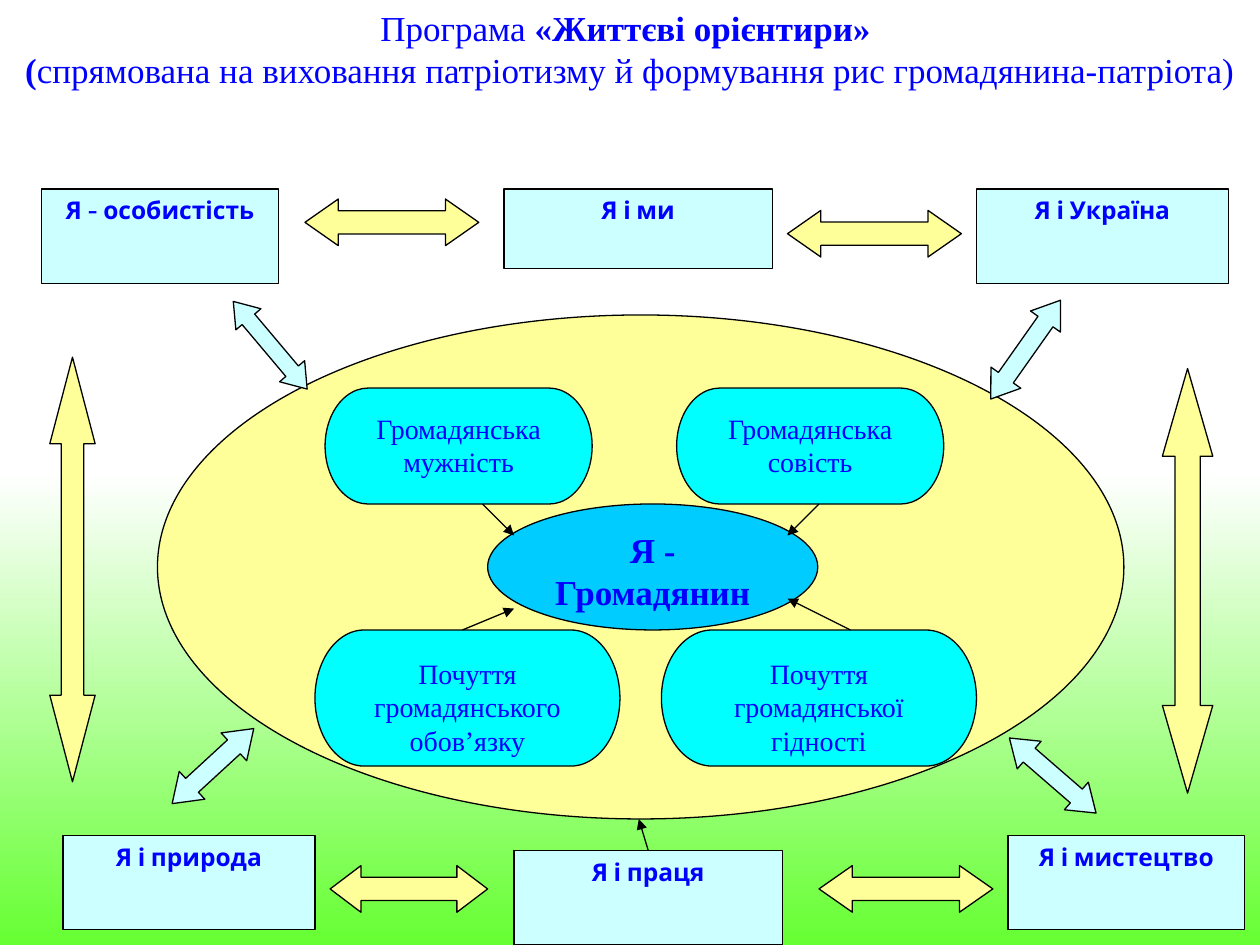
from dataclasses import dataclass

from lxml import etree
from pptx import Presentation
from pptx.dml.color import RGBColor
from pptx.enum import shapes, text
from pptx.oxml import ns
from pptx.util import Inches, Pt


@dataclass(frozen=True)
class Theme:
    ink: str = "0000FF"
    outline: str = "000000"
    meadow: str = "66FF33"
    white: str = "FFFFFF"
    yellow: str = "FFFF99"
    pale: str = "CCFFFF"
    cyan: str = "00FFFF"
    blue: str = "00CCFF"
    serif: str = "Times New Roman"
    sans: str = "Cabin"
    heading: int = 20
    virtue: int = 16
    label: int = 14
    stroke: float = 0.75


@dataclass(frozen=True)
class Box:
    left: float
    top: float
    width: float
    height: float
    words: str = ""


@dataclass(frozen=True)
class DoubleArrow:
    box: Box
    fill: str
    rotation: float = 0
    head: float = 0.715


@dataclass(frozen=True)
class Pointer:
    start: tuple[float, float]
    end: tuple[float, float]


THEME = Theme()

VIRTUES = [
    Box(2.58, 3.08, 2.12, 0.92, "Громадянська\nмужність"),
    Box(5.37, 3.08, 2.12, 0.92, "Громадянська совість"),
    Box(2.5, 5, 2.42, 1.08, "Почуття громадянського обов’язку"),
    Box(5.25, 5, 2.5, 1.08, "Почуття громадянської гідності"),
]
AREAS = [
    Box(0.33, 1.5, 1.88, 0.75, "Я - особистість"),
    Box(4, 1.5, 2.13, 0.63, "Я і ми"),
    Box(7.75, 1.5, 2, 0.75, "Я і Україна"),
    Box(0.5, 6.63, 2, 0.75, "Я і природа"),
    Box(8, 6.63, 1.88, 0.75, "Я і мистецтво"),
]
WORK = Box(4.08, 6.75, 2.13, 0.75, "Я і праця")
ARROWS = [
    DoubleArrow(Box(2.42, 1.58, 1.38, 0.37), THEME.yellow),
    DoubleArrow(Box(6.25, 1.67, 1.38, 0.37), THEME.yellow),
    DoubleArrow(Box(2.62, 6.87, 1.25, 0.37), THEME.yellow, 180, 0.66),
    DoubleArrow(Box(6.5, 6.87, 1.38, 0.37), THEME.yellow),
    DoubleArrow(Box(-1.11, 4.34, 3.37, 0.36), THEME.yellow, 90, 1.91),
    DoubleArrow(Box(7.74, 4.41, 3.37, 0.4), THEME.yellow, 90, 1.74),
    DoubleArrow(Box(1.69, 2.61, 0.91, 0.26), THEME.pale, 229.9),
    DoubleArrow(Box(7.66, 2.63, 0.96, 0.29), THEME.pale, 125.2),
    DoubleArrow(Box(1.25, 5.93, 0.88, 0.3), THEME.pale, 137.4),
    DoubleArrow(Box(7.9, 6.01, 0.91, 0.29), THEME.pale, 220.9),
]
POINTERS = [
    Pointer((3.83, 4), (4.08, 4.25)),
    Pointer((6.5, 4), (6.25, 4.25)),
    Pointer((3.67, 5), (4.08, 4.83)),
    Pointer((6.75, 5), (6.25, 4.75)),
]


def style_run(run, size: float, font: str, bold: bool) -> None:
    run.font.size = Pt(size)
    run.font.name = font
    run.font.bold = bold
    run.font.color.rgb = RGBColor.from_string(THEME.ink)


def draw_shape(slide, kind, box: Box, fill: str, size: float = THEME.label,
               font: str = THEME.serif, bold: bool = False):
    shape = slide.shapes.add_shape(
        kind, Inches(box.left), Inches(box.top), Inches(box.width), Inches(box.height))
    shape.shadow.inherit = False
    shape.fill.solid()
    shape.fill.fore_color.rgb = RGBColor.from_string(fill)
    shape.line.color.rgb = RGBColor.from_string(THEME.outline)
    shape.line.width = Pt(THEME.stroke)
    if box.words:
        frame = shape.text_frame
        frame.text = box.words
        frame.word_wrap = True
        frame.vertical_anchor = text.MSO_ANCHOR.TOP
        for paragraph in frame.paragraphs:
            paragraph.alignment = text.PP_ALIGN.CENTER
            for run in paragraph.runs:
                style_run(run, size, font, bold)
    return shape


def draw_area(slide, box: Box):
    return draw_shape(slide, shapes.MSO_SHAPE.RECTANGLE, box, THEME.pale,
                      THEME.label, THEME.sans, True)


def draw_double_arrow(slide, arrow: DoubleArrow) -> None:
    shape = draw_shape(slide, shapes.MSO_SHAPE.LEFT_RIGHT_ARROW, arrow.box, arrow.fill)
    shape.rotation = arrow.rotation
    shape.adjustments[0] = 0.5
    shape.adjustments[1] = arrow.head


def draw_pointer(slide, pointer: Pointer):
    connector = slide.shapes.add_connector(
        shapes.MSO_CONNECTOR.STRAIGHT,
        *(Inches(value) for value in pointer.start + pointer.end))
    connector.line.color.rgb = RGBColor.from_string(THEME.outline)
    connector.line.width = Pt(THEME.stroke)
    etree.SubElement(connector.line._get_or_add_ln(), ns.qn("a:tailEnd"), type="triangle")
    etree.SubElement(connector._element.spPr, ns.qn("a:effectLst"))
    return connector


def paint_background(slide) -> None:
    fill = slide.background.fill
    fill.gradient()
    fill.gradient_angle = 90
    stops = zip(fill.gradient_stops, (0, 0.5), (THEME.meadow, THEME.white))
    for stop, position, color in stops:
        stop.position = position
        stop.color.rgb = RGBColor.from_string(color)


def write_title(slide) -> None:
    title = slide.shapes.title
    title.left, title.top = Inches(0), Inches(0)
    title.width, title.height = Inches(10), Inches(0.77)
    frame = title.text_frame
    frame.word_wrap = True
    frame.auto_size = text.MSO_AUTO_SIZE.NONE
    frame.vertical_anchor = text.MSO_ANCHOR.TOP
    lines = [
        [("Програма ", False), ("«Життєві орієнтири» ", True)],
        [("(", True),
         ("спрямована на виховання патріотизму й формування рис громадянина-патріота)", False)],
    ]
    for index, pieces in enumerate(lines):
        paragraph = frame.add_paragraph() if index else frame.paragraphs[0]
        paragraph.alignment = text.PP_ALIGN.CENTER
        for words, bold in pieces:
            run = paragraph.add_run()
            run.text = words
            style_run(run, THEME.heading, THEME.serif, bold)


def main() -> None:
    presentation = Presentation()
    presentation.slide_width, presentation.slide_height = Inches(10), Inches(7.5)
    slide = presentation.slides.add_slide(presentation.slide_layouts[5])
    paint_background(slide)
    write_title(slide)

    draw_shape(slide, shapes.MSO_SHAPE.OVAL, Box(1.25, 2.5, 7.67, 4), THEME.yellow)
    draw_shape(slide, shapes.MSO_SHAPE.OVAL, Box(3.87, 4, 2.62, 1, "Я - Громадянин"),
               THEME.blue, THEME.heading, bold=True)
    for virtue in VIRTUES:
        draw_shape(slide, shapes.MSO_SHAPE.FLOWCHART_TERMINATOR, virtue,
                   THEME.cyan, THEME.virtue)
    for pointer in POINTERS:
        draw_pointer(slide, pointer)
    for area in AREAS:
        draw_area(slide, area)
    for arrow in ARROWS:
        draw_double_arrow(slide, arrow)
    work = draw_area(slide, WORK)
    draw_pointer(slide, Pointer((5.12, 6.75), (5.07, 6.5))).begin_connect(work, 0)

    presentation.save("out.pptx")


if __name__ == "__main__":
    main()
